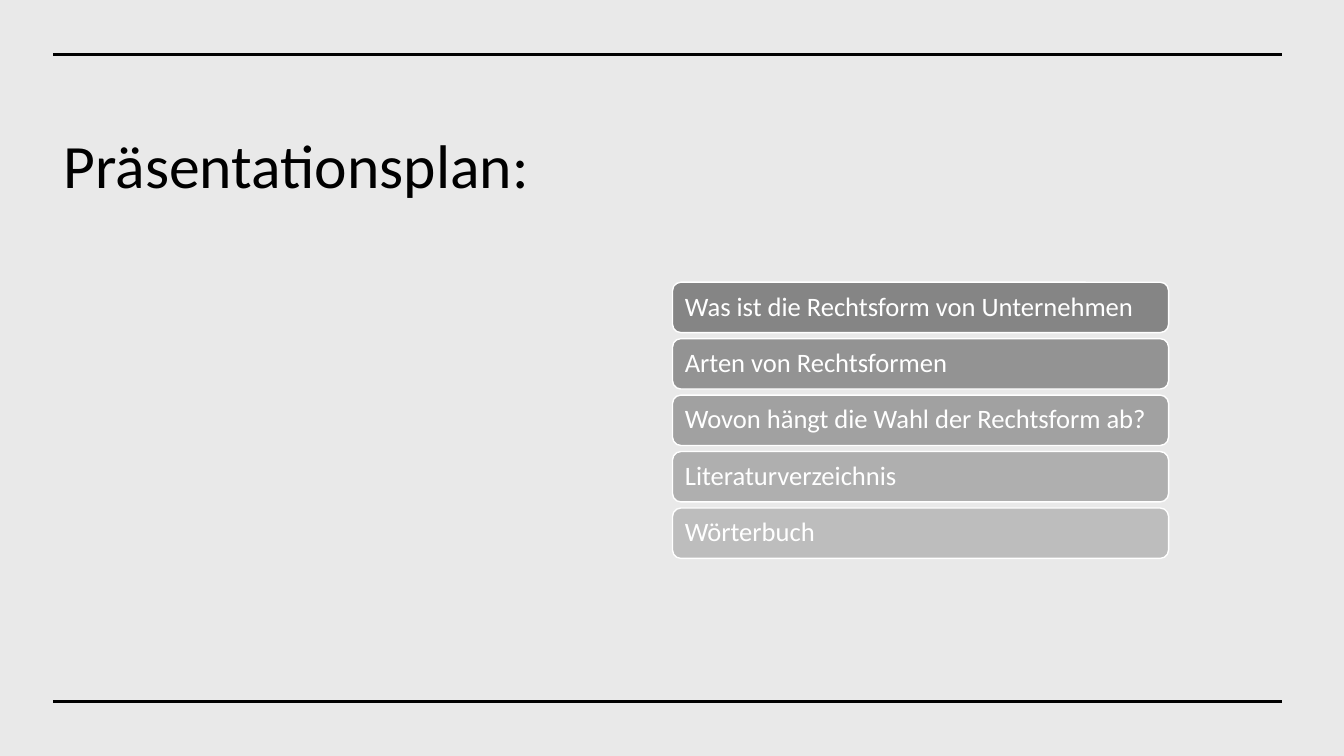
from pptx import Presentation
from pptx.dml.color import RGBColor
from pptx.enum.shapes import MSO_CONNECTOR, MSO_SHAPE
from pptx.enum.text import MSO_ANCHOR, MSO_AUTO_SIZE, PP_ALIGN
from pptx.oxml.ns import qn
from pptx.util import Inches, Pt
from lxml.etree import SubElement

HUES = {"back": "E9E9E9", "ink": "000000", "white": "FFFFFF"}
TOPICS = [
    "Was ist die Rechtsform von Unternehmen",
    "Arten von Rechtsformen",
    "Wovon hängt die Wahl der Rechtsform ab?",
    "Literaturverzeichnis",
    "Wörterbuch",
]


def assign(target, values):
    for name, value in values.items():
        setattr(target, name, value)


class Deck:
    font = "Calibri"

    def __init__(self):
        self.prs = Presentation()
        assign(self.prs, {"slide_width": Inches(13.33), "slide_height": Inches(7.5)})
        self.slide = self.prs.slides.add_slide(self.prs.slide_layouts[5])
        self.paint(self.slide.background.fill, HUES["back"])

    def paint(self, fill, hue):
        fill.solid()
        fill.fore_color.rgb = RGBColor.from_string(hue)

    def label(self, shape, text, size, hue, frame, para):
        """Set the text of a shape with frame and paragraph formats."""
        assign(shape.text_frame, {"word_wrap": True, "auto_size": MSO_AUTO_SIZE.NONE, **frame})
        line = shape.text_frame.paragraphs[0]
        line.text = text
        assign(line, {"alignment": PP_ALIGN.LEFT, **para})
        font = line.runs[0].font
        assign(font, {"name": self.font, "size": Pt(size)})
        font.color.rgb = RGBColor.from_string(hue)

    def title(self, text, left, top, width, height):
        shape = self.slide.shapes.title
        assign(shape, {"left": Inches(left), "top": Inches(top),
                       "width": Inches(width), "height": Inches(height)})
        frame = {"vertical_anchor": MSO_ANCHOR.TOP, "margin_top": Inches(0.31)}
        self.label(shape, text, 44, HUES["ink"], frame, {"space_after": Pt(6)})

    def rule(self, left, right, top):
        line = self.slide.shapes.add_connector(
            MSO_CONNECTOR.STRAIGHT, Inches(left), Inches(top), Inches(right), Inches(top))
        line.line.width = Pt(2.25)
        self.paint(line.line.fill, HUES["ink"])
        SubElement(line._element.spPr, qn("a:effectLst"))

    def bar(self, text, hue, left, top, width, height):
        shape = self.slide.shapes.add_shape(
            MSO_SHAPE.ROUNDED_RECTANGLE, Inches(left), Inches(top), Inches(width), Inches(height))
        shape.shadow.inherit = False
        self.paint(shape.fill, hue)
        self.paint(shape.line.fill, HUES["white"])
        shape.line.width = Pt(1)
        frame = {f"margin_{side}": Inches(0.1) for side in ("left", "right", "top", "bottom")}
        frame["vertical_anchor"] = MSO_ANCHOR.MIDDLE
        self.label(shape, text, 19, HUES["white"], frame, {"line_spacing": 0.9})


def main():
    deck = Deck()
    deck.title("Präsentationsplan:", 0.53, 0.95, 7.83, 3.66)
    for top in (0.54, 6.96):
        deck.rule(0.53, 12.72, top)
    for i, topic in enumerate(TOPICS):
        grey = f"{0x85 + 14 * i:02X}" * 3
        deck.bar(topic, grey, 6.67, 2.8 + 0.56 * i, 4.92, 0.5)
    deck.prs.save("out.pptx")


if __name__ == "__main__":
    main()
